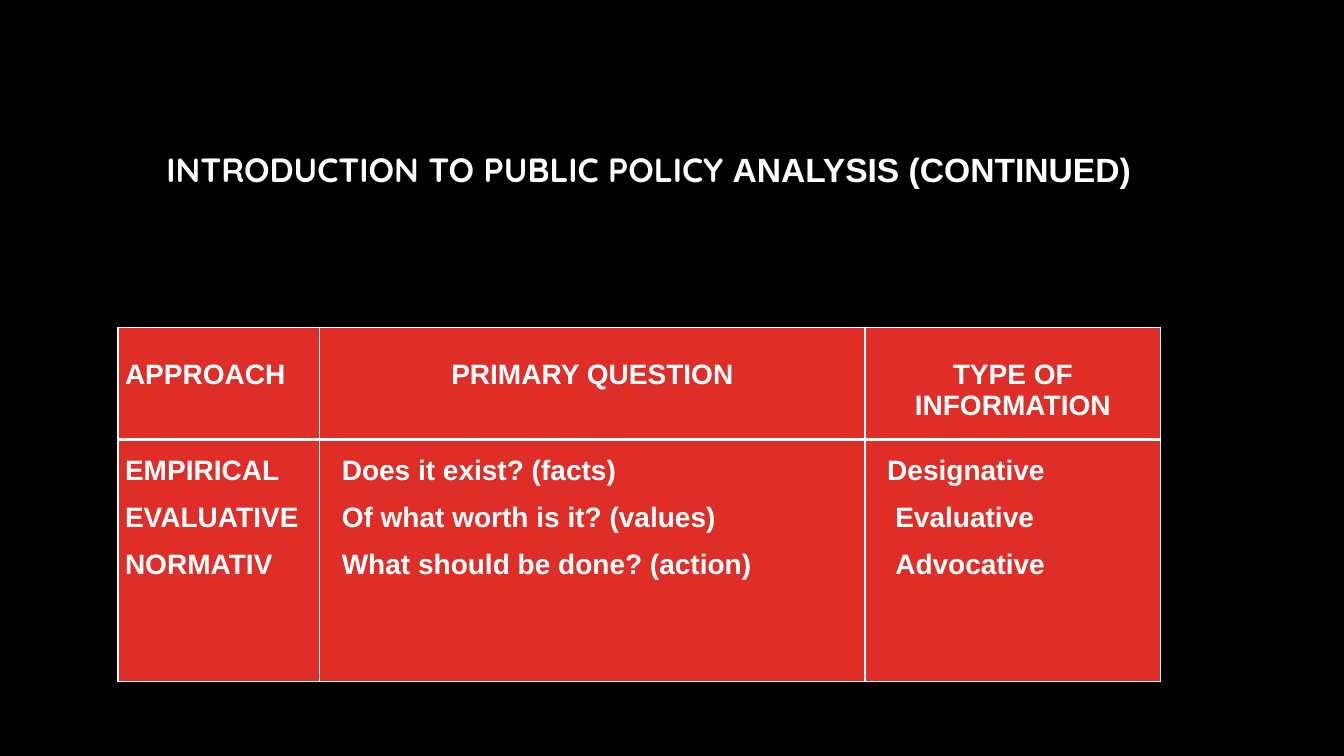
from lxml import etree
from pptx import Presentation
from pptx.dml.color import RGBColor
from pptx.enum.text import MSO_ANCHOR, PP_ALIGN
from pptx.oxml.ns import qn
from pptx.util import Inches, Pt

LEFT, CENTER, JUSTIFY = PP_ALIGN.LEFT, PP_ALIGN.CENTER, PP_ALIGN.JUSTIFY
MIDDLE = MSO_ANCHOR.MIDDLE

COLORS = {"background": "000000", "text": "FFFFFF", "cell": "DF2E28", "border": "FFFFFF"}
THIN, THICK = 1, 3

HEADERS = [("APPROACH", LEFT), ("PRIMARY QUESTION", CENTER), ("TYPE OF INFORMATION", CENTER)]
# Each body cell holds lines of (text, indent in inches)
BODY = [
    [("EMPIRICAL", 0), ("EVALUATIVE", 0), ("NORMATIV", 0)],
    [("Does it exist? (facts)", 0.15), ("Of what worth is it? (values)", 0.15),
     ("What should be done? (action)", 0.15)],
    [("Designative", 0.15), ("Evaluative", 0.23), ("Advocative", 0.23)],
]


def add_text(paragraph, text, font="Arial", size=20, align=LEFT, spacing=1.0, indent=0):
    """Add a bold run to a paragraph and set the paragraph's format."""
    paragraph.alignment = align
    paragraph.line_spacing = spacing
    if indent:
        paragraph._p.get_or_add_pPr().set("marL", str(Inches(indent)))
    run = paragraph.add_run()
    run.text = text
    run.font.name = font
    run.font.size = Pt(size)
    run.font.bold = True
    run.font.color.rgb = RGBColor.from_string(COLORS["text"])


class SlideBuilder:
    def __init__(self, presentation):
        self.slide = presentation.slides.add_slide(presentation.slide_layouts[6])
        fill = self.slide.background.fill
        fill.solid()
        fill.fore_color.rgb = RGBColor.from_string(COLORS["background"])

    def title(self, left, top, width, height, parts):
        shape = self.slide.shapes.add_textbox(
            Inches(left), Inches(top), Inches(width), Inches(height))
        frame = shape.text_frame
        frame.word_wrap = True
        frame.vertical_anchor = MIDDLE
        frame.margin_left = Inches(0.82)
        for text, font in parts:
            add_text(frame.paragraphs[0], text, font=font, size=24, spacing=0.9)

    def table(self, left, top, widths, heights):
        shape = self.slide.shapes.add_table(
            len(heights), len(widths), Inches(left), Inches(top),
            Inches(sum(widths)), Inches(sum(heights)))
        table = shape.table
        for column, width in zip(table.columns, widths):
            column.width = Inches(width)
        for row, height in zip(table.rows, heights):
            row.height = Inches(height)
        return table

    def cell(self, cell, lines, top_border, bottom_border, margin_top=0, **text_format):
        cell.margin_left = cell.margin_right = Inches(0.07)
        cell.margin_top, cell.margin_bottom = Inches(margin_top), 0
        borders = {"a:lnL": THIN, "a:lnR": THIN, "a:lnT": top_border, "a:lnB": bottom_border}
        for tag, width in borders.items():
            line = etree.SubElement(cell._tc.get_or_add_tcPr(), qn(tag), w=str(Pt(width)))
            line_fill = etree.SubElement(line, qn("a:solidFill"))
            etree.SubElement(line_fill, qn("a:srgbClr"), val=COLORS["border"])
        cell.fill.solid()
        cell.fill.fore_color.rgb = RGBColor.from_string(COLORS["cell"])
        frame = cell.text_frame
        for index, (text, indent) in enumerate(lines):
            paragraph = frame.add_paragraph() if index else frame.paragraphs[0]
            add_text(paragraph, text, indent=indent, **text_format)


def main():
    presentation = Presentation()
    presentation.slide_width = Inches(13.33)
    presentation.slide_height = Inches(7.5)
    builder = SlideBuilder(presentation)

    # Title
    builder.title(0.83, 0.99, 11.68, 1.42, [
        ("INTRODUCTION TO PUBLIC POLICY ", "Quicksand"),
        ("ANALYSIS (CONTINUED)", "Arial"),
    ])

    # Table of approaches
    table = builder.table(1.17, 3.25, widths=[2, 5.41, 2.93], heights=[1.11, 2.4])
    for column, ((header, align), lines) in enumerate(zip(HEADERS, BODY)):
        builder.cell(table.cell(0, column), [(header, 0)], THIN, THICK,
                     margin_top=0.31, align=align)
        builder.cell(table.cell(1, column), lines, THICK, THIN,
                     align=JUSTIFY, spacing=1.5)

    presentation.save("out.pptx")


if __name__ == "__main__":
    main()
